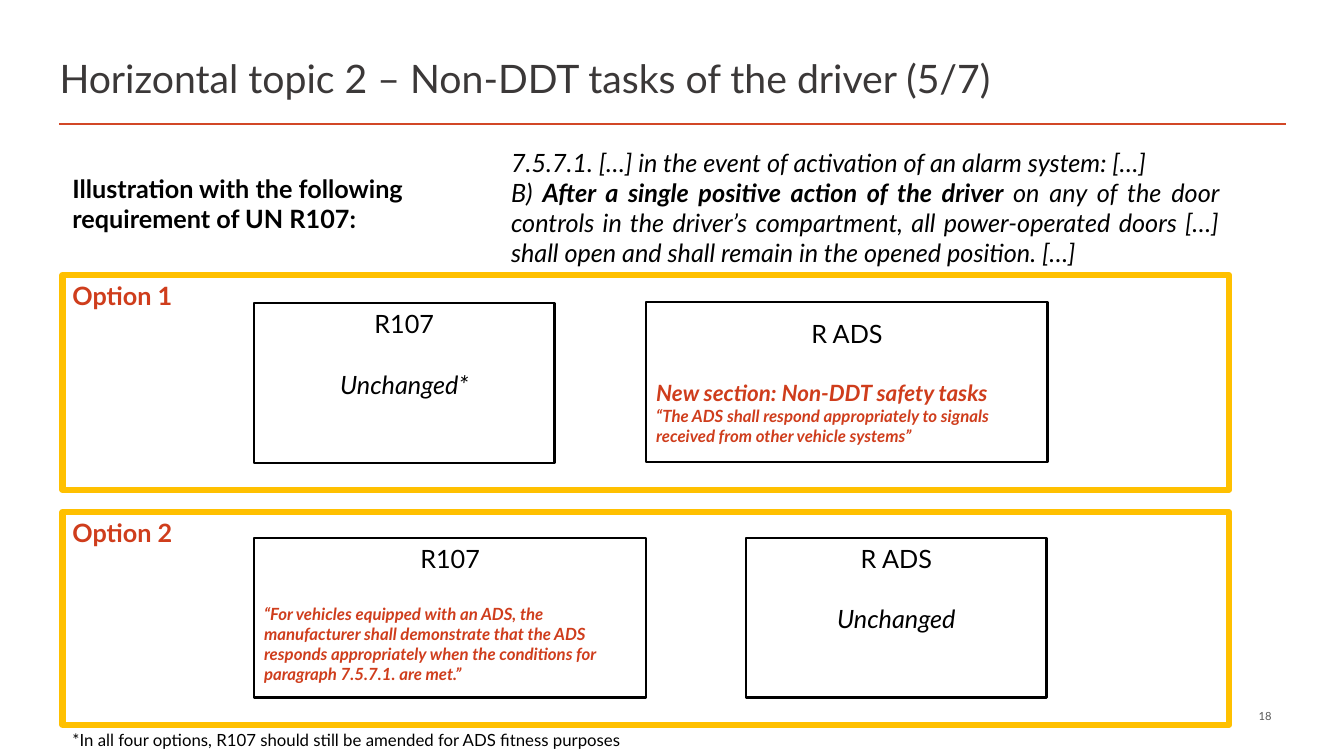
"""Build the slide on non-DDT tasks of the driver, with two regulatory options."""
from pptx import Presentation
from pptx.dml.color import RGBColor
from pptx.enum.shapes import MSO_CONNECTOR as Connector, MSO_SHAPE as Preset
from pptx.enum.text import MSO_ANCHOR as Anchor, MSO_AUTO_SIZE as Fit, PP_ALIGN as Align
from pptx.oxml.ns import qn
from pptx.util import Emu, Pt
from lxml.etree import SubElement

PX = 9144
BLACK, RED, AMBER = "000000", "CF3D1C", "FFC000"


def px(length):
    return Emu(length * PX)


def color(code):
    return RGBColor.from_string(code)


def write(frame, *pieces, size=18, ink=BLACK, bold=False, italic=False,
          align=Align.LEFT, before=0):
    first = frame.paragraphs[0]
    paragraph = frame.add_paragraph() if first.runs else first
    paragraph.alignment = align
    paragraph.space_before = Pt(before)
    for position, piece in enumerate(pieces):
        run = paragraph.add_run()
        run.text = piece
        run.font.name = "Lato"
        run.font.size = Pt(size)
        run.font.color.rgb = color(ink)
        run.font.bold = bold or position % 2 == 1
        run.font.italic = italic


class Board:
    def __init__(self, slide):
        self.slide = slide

    def title(self, words, *place):
        heading = self.slide.shapes.title
        heading.left, heading.top, heading.width, heading.height = map(px, place)
        frame = heading.text_frame
        frame.auto_size = Fit.NONE
        frame.vertical_anchor = Anchor.MIDDLE
        write(frame, words, size=28, ink="3B3838")

    def rule(self, left, right, top):
        line = self.slide.shapes.add_connector(
            Connector.STRAIGHT, px(left), px(top), px(right), px(top))
        line.line.color.rgb = color("D24726")
        line.line.width = Pt(2)
        SubElement(line._element.spPr, qn("a:effectLst"))

    def note(self, *place, anchor=Anchor.TOP):
        frame = self.slide.shapes.add_textbox(*map(px, place)).text_frame
        frame.word_wrap = True
        frame.vertical_anchor = anchor
        return frame

    def box(self, *place, edge=BLACK, weight=1.5, anchor=Anchor.TOP):
        outline = self.slide.shapes.add_shape(Preset.RECTANGLE, *map(px, place))
        outline.shadow.inherit = False
        outline.fill.background()
        outline.line.color.rgb = color(edge)
        outline.line.width = Pt(weight)
        outline.text_frame.vertical_anchor = anchor
        return outline.text_frame

    def regulation(self, name, *place, anchor=Anchor.TOP):
        frame = self.box(*place, anchor=anchor)
        write(frame, name, align=Align.CENTER)
        return frame

    def option(self, name, top, height):
        write(self.box(62, top, 1157, height, edge=AMBER, weight=4.5),
              name, ink=RED, bold=True)


def main():
    deck = Presentation()
    deck.slide_width, deck.slide_height = px(1333), px(750)
    board = Board(deck.slides.add_slide(deck.slide_layouts[5]))
    gap = 21.6
    unchanged = dict(italic=True, align=Align.CENTER, before=gap)
    proposal = dict(ink=RED, bold=True, italic=True)
    quote = dict(italic=True, align=Align.JUSTIFY)

    board.rule(59, 1275, 123)
    board.title("Horizontal topic 2 – Non-DDT tasks of the driver (5/7)", 49, 47, 1226, 61)
    write(board.note(913, 703, 358, 15, anchor=Anchor.MIDDLE), "18",
          size=8, ink="595959", align=Align.RIGHT)

    requirement = board.note(497, 141, 722, 131)
    write(requirement, "7.5.7.1. […] in the event of activation of an alarm system: […]", **quote)
    write(requirement, "B) ", "After a single positive action of the driver ",
          "on any of the door controls in the driver’s compartment, all power-operated doors […] "
          "shall open and shall remain in the opened position. […]", **quote)
    write(board.note(62, 167, 396, 71),
          "Illustration with the following requirement of UN R107:", bold=True)

    write(board.regulation("R107", 252, 301, 298, 158), "Unchanged*", **unchanged)
    new_section = board.regulation("R ADS", 641, 300, 398, 158, anchor=Anchor.MIDDLE)
    write(new_section, "New section: Non-DDT safety tasks", size=16, before=gap, **proposal)
    write(new_section, "“The ADS shall respond appropriately to signals received "
          "from other vehicle systems”", size=12, **proposal)
    board.option("Option 1", 273, 213)

    write(board.regulation("R107", 252, 534, 389, 158),
          "“For vehicles equipped with an ADS, the manufacturer shall demonstrate that the ADS "
          "responds appropriately when the conditions for paragraph 7.5.7.1. are met.”",
          size=12, before=gap, **proposal)
    write(board.regulation("R ADS", 740, 534, 298, 158), "Unchanged", **unchanged)
    board.option("Option 2", 508, 211)

    write(board.note(62, 719, 605, 30),
          "*In all four options, R107 should still be amended for ADS fitness purposes", size=12)
    deck.save("out.pptx")


if __name__ == "__main__":
    main()
